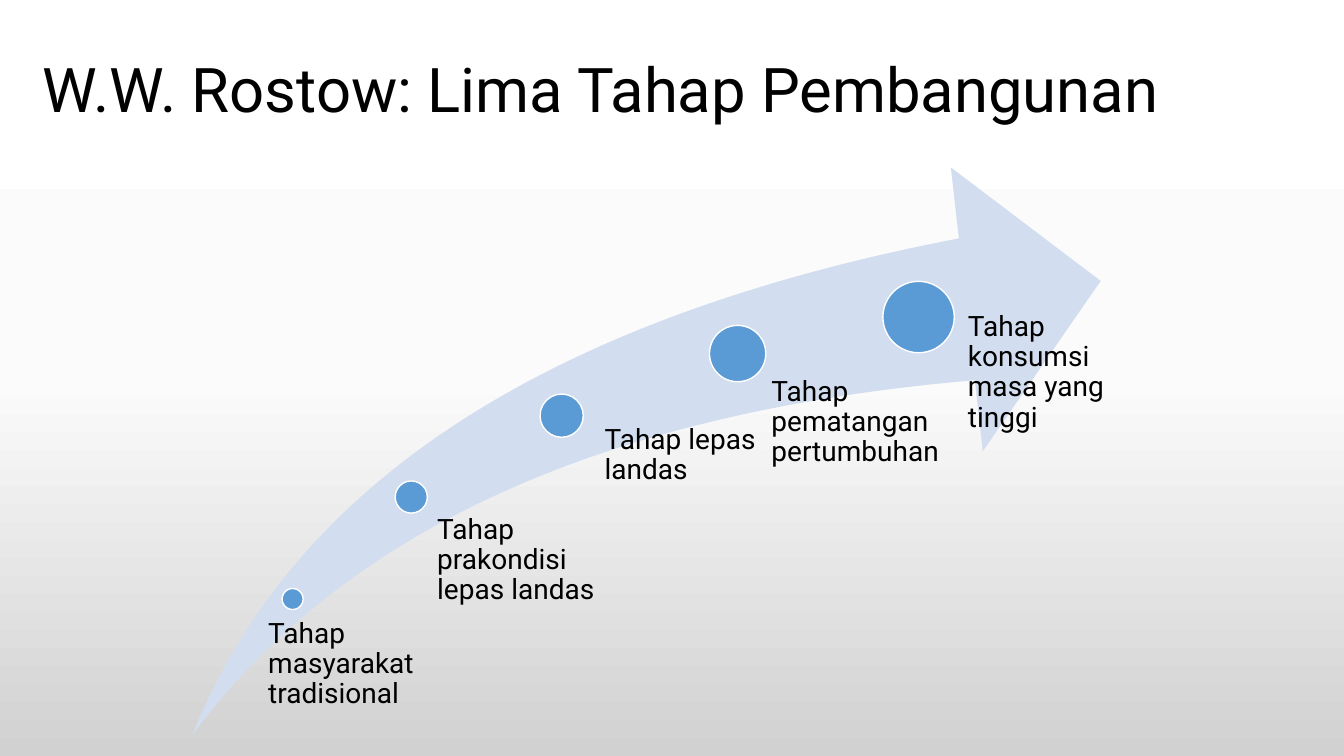
from copy import deepcopy

from pptx import Presentation
from pptx.dml.color import RGBColor
from pptx.enum.shapes import MSO_SHAPE
from pptx.enum.text import MSO_ANCHOR
from pptx.oxml.ns import qn
from pptx.util import Cm, Pt

COLORS = {
    "text": "000000",
    "arrow": "D2DEEF",
    "stage": "5B9BD5",
    "outline": "FFFFFF",
}
BACKGROUND = [(0, "FFFFFF"), (0.5, "FBFBFB"), (1, "D1D1D1")]
INSET_PER_DIAMETER = 0.53

STAGES = [
    ((7.11, 14.83, 0.53), (6.48, 15.6, 4.78, 2.41), "Tahap masyarakat tradisional"),
    ((9.96, 12.12, 0.81), (10.59, 12.98, 4.78, 5.05), "Tahap prakondisi lepas landas"),
    ((13.61, 9.93, 1.09), (14.66, 10.72, 4.42, 5.61), "Tahap lepas landas"),
    ((17.88, 8.2, 1.42), (18.69, 9.5, 5.49, 5.66), "Tahap pematangan pertumbuhan"),
    ((22.25, 7.09, 1.8), (23.44, 7.87, 5.28, 6.17), "Tahap konsumsi masa yang tinggi"),
]


class SlideBuilder:
    """Draws styled elements on the current slide."""

    font_name = "Roboto"
    line_spacing = 0.9

    def __init__(self, slide):
        self.slide = slide

    def background(self, stops):
        fill = self.slide.background.fill
        fill.gradient()
        fill.gradient_angle = 270
        stop_list = next(self.slide.element.iter(qn("a:gsLst")))
        while len(stop_list) < len(stops):
            stop_list.append(deepcopy(stop_list[-1]))
        for stop, (position, color) in zip(fill.gradient_stops, stops):
            stop.position = position
            stop.color.rgb = RGBColor.from_string(color)

    def shape(self, kind, box, color, outline=None):
        shape = self.slide.shapes.add_shape(kind, *map(Cm, box))
        shape.shadow.inherit = False
        shape.fill.solid()
        shape.fill.fore_color.rgb = RGBColor.from_string(COLORS[color])
        if outline:
            shape.line.color.rgb = RGBColor.from_string(COLORS[outline])
            shape.line.width = Pt(1)
        else:
            shape.line.fill.background()
        return shape

    def text(self, box, text, size):
        frame = self.slide.shapes.add_textbox(*map(Cm, box)).text_frame
        frame.word_wrap = True
        paragraph = frame.paragraphs[0]
        paragraph.text = text
        paragraph.line_spacing = self.line_spacing
        paragraph.font.name = self.font_name
        paragraph.font.size = Pt(size)
        paragraph.font.color.rgb = RGBColor.from_string(COLORS["text"])
        return frame

    def title(self, box, text):
        self.text(box, text, 44).vertical_anchor = MSO_ANCHOR.MIDDLE

    def arrow(self, box):
        arrow = self.shape(MSO_SHAPE.SWOOSH_ARROW, box, "arrow")
        arrow.adjustments[0] = 0.25
        arrow.adjustments[1] = 0.25

    def stage(self, circle, label_box, label):
        left, top, diameter = circle
        self.shape(MSO_SHAPE.OVAL, (left, top, diameter, diameter), "stage", "outline")
        frame = self.text(label_box, label, 20)
        frame.margin_left = Cm(diameter * INSET_PER_DIAMETER)
        frame.margin_top = frame.margin_right = frame.margin_bottom = 0


def main():
    presentation = Presentation()
    presentation.slide_width = Cm(33.87)
    presentation.slide_height = Cm(19.05)
    builder = SlideBuilder(presentation.slides.add_slide(presentation.slide_layouts[6]))
    builder.background(BACKGROUND)
    builder.title((0.81, 1.02, 32.08, 2.64), "W.W. Rostow: Lima Tahap Pembangunan")
    builder.arrow((4.85, 4.22, 22.89, 14.3))
    for circle, label_box, label in STAGES:
        builder.stage(circle, label_box, label)
    presentation.save("out.pptx")


if __name__ == "__main__":
    main()
